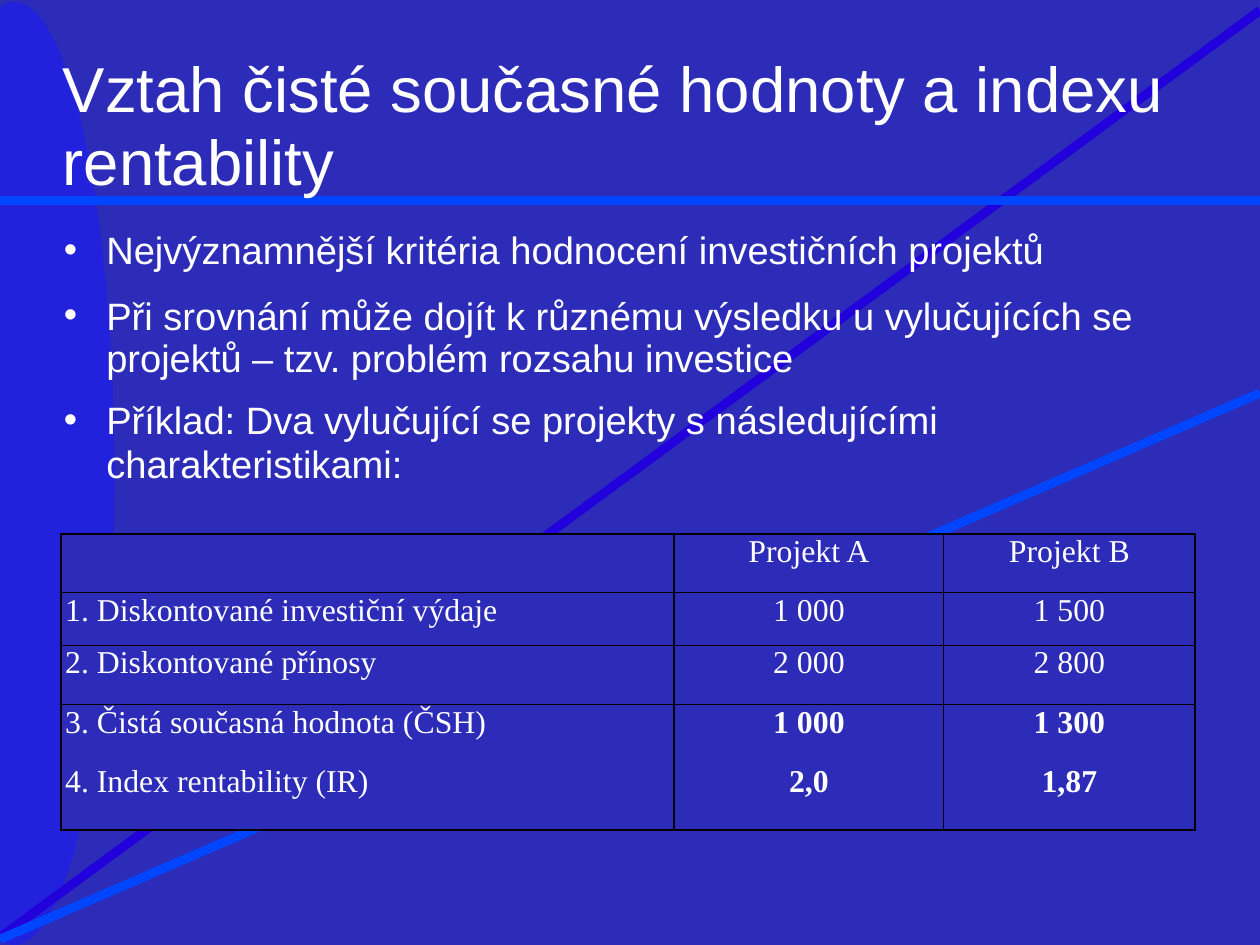
import math

from lxml import etree
from pptx import Presentation
from pptx import util as u
from pptx.dml.color import RGBColor
from pptx.enum import text
from pptx.oxml.ns import qn

WHITE, BLACK = "FFFFFF", "000000"
ROYAL, ARC, VIOLET, AZURE = "2C2CB8", "2222DC", "2200DC", "0046FF"
NO_GRID_STYLE = "{2D5ABB26-0587-4C30-8999-92F81FD0307C}"

TITLE = "Vztah čisté současné hodnoty a indexu rentability"
# Wording with its exact line spacing and space before, in points
BULLETS = [
    ("Nejvýznamnější kritéria hodnocení investičních projektů", None, 0),
    ("Při srovnání může dojít k různému výsledku u vylučujících se projektů"
     " – tzv. problém rozsahu investice", 26.8, 14.6),
    ("Příklad: Dva vylučující se projekty s následujícími charakteristikami:",
     27.8, 11.4),
]
PROJECTS = [
    ("", "Projekt A", "Projekt B"),
    ("1. Diskontované investiční výdaje", "1 000", "1 500"),
    ("2. Diskontované přínosy", "2 000", "2 800"),
    ("3. Čistá současná hodnota (ČSH)", "1 000", "1 300"),
    ("4. Index rentability (IR)", "2,0", "1,87"),
]
RULED_TOPS = (0, 1, 2)
BOLD_ROWS = (3, 4)


def color(value):
    return RGBColor.from_string(value)


def apply(target, values):
    for name, value in values.items():
        setattr(target, name, value)


class SlideBuilder:
    """Places elements on a grid of 100 columns by 100 rows."""

    frame = dict(word_wrap=True, margin_left=0, margin_right=0,
                 margin_top=0, margin_bottom=0)

    def __init__(self, deck):
        self.column = deck.slide_width / 100
        self.row = deck.slide_height / 100
        self.page = deck.slides.add_slide(deck.slide_layouts[6])

    def across(self, columns):
        return round(columns * self.column)

    def down(self, rows):
        return round(rows * self.row)

    def area(self, left, top, width, height):
        return (self.across(left), self.down(top),
                self.across(width), self.down(height))

    def background(self, fill):
        self.page.background.fill.solid()
        self.page.background.fill.fore_color.rgb = color(fill)

    def clipped_ellipse(self, center, radii, fill, steps=60):
        """Draws the part of an ellipse right of the slide's left edge."""
        limit = math.acos(-center[0] / radii[0])
        angles = [limit * (2 * step / steps - 1) for step in range(steps + 1)]
        points = [(self.across(center[0] + radii[0] * math.cos(angle)),
                   self.down(center[1] + radii[1] * math.sin(angle)))
                  for angle in angles]
        builder = self.page.shapes.build_freeform(*points[0])
        builder.add_line_segments(points[1:], close=True)
        shape = builder.convert_to_shape()
        shape.shadow.inherit = False
        shape.fill.solid()
        shape.fill.fore_color.rgb = color(fill)
        shape.line.fill.background()

    def line(self, start, end, stroke, width=5.67):
        connector = self.page.shapes.add_connector(
            1, self.across(start[0]), self.down(start[1]),
            self.across(end[0]), self.down(end[1]))
        connector.line.color.rgb = color(stroke)
        connector.line.width = u.Pt(width)
        properties = connector._element.spPr
        etree.SubElement(properties, qn("a:effectLst"))

    def span(self, para, words, font, size, bold=False):
        span = para.add_run()
        span.text = words
        apply(span.font, dict(name=font, size=u.Pt(size), bold=bold))
        span.font.color.rgb = color(WHITE)

    def text_box(self, area, paragraphs, size, bullet=False):
        box = self.page.shapes.add_textbox(*self.area(*area)).text_frame
        apply(box, self.frame)
        for index, (words, spacing, before) in enumerate(paragraphs):
            para = box.add_paragraph() if index else box.paragraphs[0]
            para.space_before = u.Pt(before)
            if spacing:
                para.line_spacing = u.Pt(spacing)
            if bullet:
                self.bullet(para)
            self.span(para, words, "Arial", size)

    def bullet(self, para):
        properties = para._p.get_or_add_pPr()
        properties.set("marL", str(u.Inches(0.39)))
        properties.set("indent", str(u.Inches(-0.37)))
        tint = etree.SubElement(properties, qn("a:buClr"))
        etree.SubElement(tint, qn("a:srgbClr"), val=WHITE)
        etree.SubElement(properties, qn("a:buFont"), typeface="Arial")
        etree.SubElement(properties, qn("a:buChar"), char="•")

    def borders(self, cell, widths):
        """Adds cell borders from a dict of side letters and points."""
        properties = cell._tc.get_or_add_tcPr()
        for side, width in widths.items():
            edge = etree.SubElement(properties, qn("a:ln" + side),
                                    w=str(u.Pt(width)))
            fill = etree.SubElement(edge, qn("a:solidFill"))
            etree.SubElement(fill, qn("a:srgbClr"), val=BLACK)

    def table(self, corner, widths, heights, rows):
        area = self.area(*corner, sum(widths), sum(heights))
        table = self.page.shapes.add_table(
            len(heights), len(widths), *area).table
        apply(table, dict(first_row=False, horz_banding=False))
        table._tbl.tblPr.find(qn("a:tableStyleId")).text = NO_GRID_STYLE
        for column, width in zip(table.columns, widths):
            column.width = self.across(width)
        for row, height in zip(table.rows, heights):
            row.height = self.down(height)
        last_row, last_column = len(heights) - 1, len(widths) - 1
        for r, row in enumerate(rows):
            for c, words in enumerate(row):
                cell = table.cell(r, c)
                edges = {"L": 1 if c else 1.5,
                         "R": 1.5 if c == last_column else 1}
                if r in RULED_TOPS:
                    edges["T"] = 1 if r else 1.5
                if r == last_row or r + 1 in RULED_TOPS:
                    edges["B"] = 1.5 if r == last_row else 1
                self.borders(cell, edges)
                cell.fill.solid()
                cell.fill.fore_color.rgb = color(ROYAL)
                apply(cell, dict(margin_left=0 if c else u.Inches(0.04),
                                 margin_right=0, margin_top=0,
                                 margin_bottom=0))
                para = cell.text_frame.paragraphs[0]
                para.alignment = (text.PP_ALIGN.CENTER if c
                                  else text.PP_ALIGN.LEFT)
                if words:
                    self.span(para, words, "Times New Roman", 20,
                              bold=c > 0 and r in BOLD_ROWS)


def main():
    deck = Presentation()
    apply(deck, dict(slide_width=u.Inches(11.03), slide_height=u.Inches(8.27)))
    page = SlideBuilder(deck)
    page.background(ROYAL)
    page.clipped_ellipse((1.18, 50.1), (7.9, 49.9), ARC)
    page.line((100, 1.1), (0, 99.2), VIOLET)
    page.line((100, 21.2), (0, 21.2), AZURE)
    page.line((100, 41.6), (0, 99.4), AZURE)
    page.text_box((4.98, 5.44, 90.2, 15.6), [(TITLE, 46.3, 0)], 40)
    page.text_box((4.9, 23.94, 85.6, 27.93), BULLETS, 24, bullet=True)
    page.table((4.81, 56.55), (48.69, 21.4, 19.95),
               (6.17, 5.56, 6.29, 6.29, 7.01), PROJECTS)
    deck.save("out.pptx")


if __name__ == "__main__":
    main()
